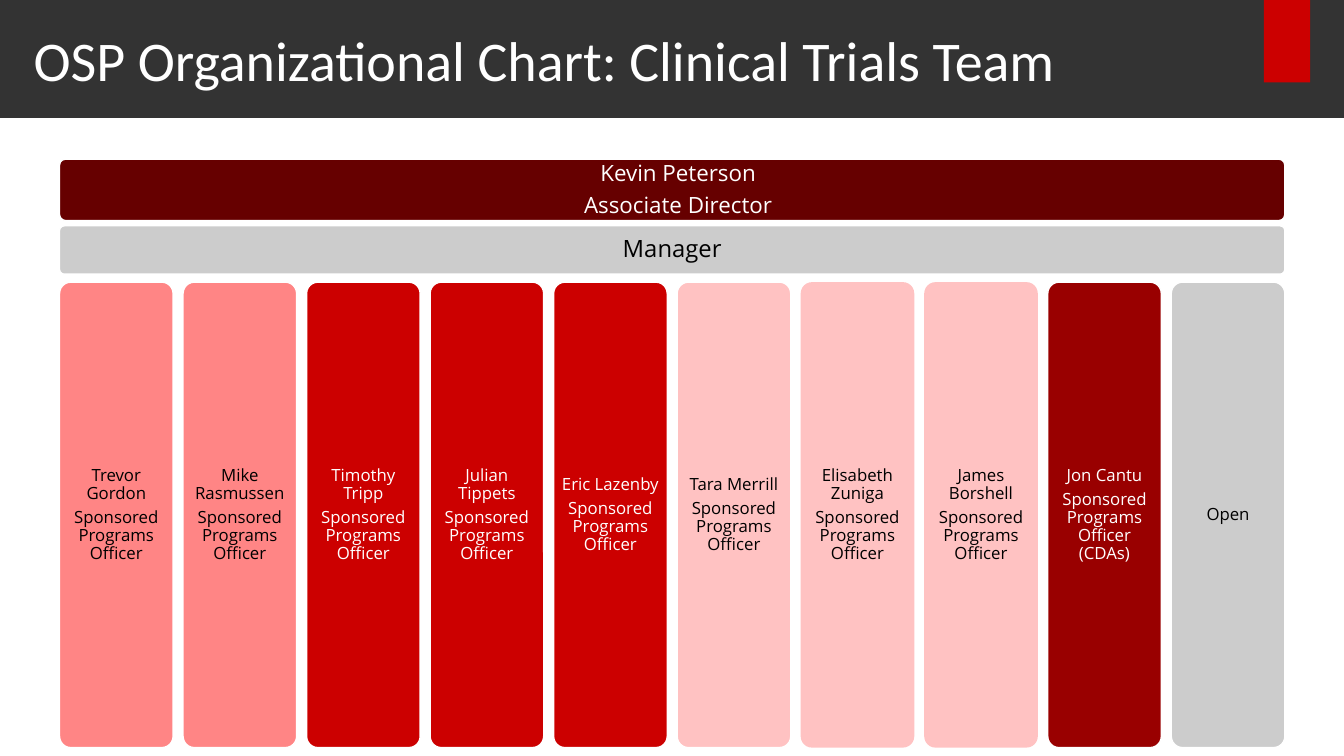
import dataclasses

import pptx
import pptx.dml.color
import pptx.enum.shapes
import pptx.enum.text
import pptx.util

Cm = pptx.util.Cm
Pt = pptx.util.Pt
SHAPE = pptx.enum.shapes.MSO_SHAPE


def rgb(value):
    return pptx.dml.color.RGBColor.from_string(value)


@dataclasses.dataclass(frozen=True)
class Theme:
    white: str = "FFFFFF"
    black: str = "000000"
    charcoal: str = "333333"
    grey: str = "CCCCCC"
    maroon: str = "660000"
    dark_red: str = "990000"
    red: str = "CC0000"
    coral: str = "FF8585"
    pink: str = "FFC2C2"
    title_font: str = "Calibri"
    body_font: str = "Open Sans"
    title_size: float = 40
    manager_size: float = 17
    director_size: float = 16
    officer_size: float = 12


THEME = Theme()
OFFICER = "Sponsored Programs Officer"
TEAM = [
    (["Trevor Gordon", OFFICER], THEME.coral, THEME.black, True),
    (["Mike Rasmussen", OFFICER], THEME.coral, THEME.black, True),
    (["Timothy Tripp", OFFICER], THEME.red, THEME.white, True),
    (["Julian Tippets", OFFICER], THEME.red, THEME.white, True),
    (["Eric Lazenby", OFFICER], THEME.red, THEME.white, True),
    (["Tara Merrill", OFFICER], THEME.pink, THEME.black, True),
    (["Elisabeth Zuniga", OFFICER], THEME.pink, THEME.black, False),
    (["James Borshell", OFFICER], THEME.pink, THEME.black, False),
    (["Jon Cantu", OFFICER + " (CDAs)"], THEME.dark_red, THEME.white, True),
    (["Open"], THEME.grey, THEME.black, True),
]


def add_block(s, kind, box, fill, outlined=False):
    sp = s.shapes.add_shape(kind, *[Cm(v) for v in box])
    sp.shadow.inherit = False
    sp.fill.solid()
    sp.fill.fore_color.rgb = rgb(fill)
    if outlined:
        sp.line.color.rgb = rgb(THEME.white)
        sp.line.width = Pt(1)
    else:
        sp.line.fill.background()
    return sp


def set_margins(tf, left, top, right, bottom):
    tf.margin_left, tf.margin_top = Cm(left), Cm(top)
    tf.margin_right, tf.margin_bottom = Cm(right), Cm(bottom)


def write_lines(tf, lines, font, size, color):
    tf.word_wrap = True
    tf.vertical_anchor = pptx.enum.text.MSO_ANCHOR.MIDDLE
    for i, line in enumerate(lines):
        p = tf.add_paragraph() if i else tf.paragraphs[0]
        p.text = line
        p.font.name = font
        p.font.size = Pt(size)
        p.font.color.rgb = rgb(color)


def add_card(s, box, lines, fill, color, size, inset, outlined=True, shift=0):
    sp = add_block(s, SHAPE.ROUNDED_RECTANGLE, box, fill, outlined)
    sp.adjustments[0] = 0.1
    tf = sp.text_frame
    set_margins(tf, inset + shift, inset, inset, inset)
    write_lines(tf, lines, THEME.body_font, size, color)
    for p in tf.paragraphs:
        p.alignment = pptx.enum.text.PP_ALIGN.CENTER
        p.line_spacing = 0.9
        p.space_after = Pt(size * 0.35)


def add_header(s, left, top, width, height):
    add_block(s, SHAPE.RECTANGLE, (left, top, width, height), THEME.charcoal)
    add_block(s, SHAPE.RECTANGLE, (left + width - 2.02, top, 1.17, 2.08), THEME.red)
    title_box = (left + 0.85, top + 0.51, width - 3.49, height - 1.01)
    tf = s.shapes.add_textbox(*[Cm(v) for v in title_box]).text_frame
    set_margins(tf, 0, 0, 0, 0)
    write_lines(tf, ["OSP Organizational Chart: Clinical Trials Team"],
                THEME.title_font, THEME.title_size, THEME.white)


def add_leaders(s, left, top, width):
    add_card(s, (left, top, width, 1.55), ["Kevin Peterson", "Associate Director"],
             THEME.maroon, THEME.white, THEME.director_size, 0.18, shift=0.3)
    add_card(s, (left, top + 1.68, width, 1.22), ["Manager"],
             THEME.grey, THEME.black, THEME.manager_size, 0.18)


def add_team(s, left, top, width, height):
    gap = 0.25
    card_width = (width - gap * (len(TEAM) - 1)) / len(TEAM)
    for i, (lines, fill, color, outlined) in enumerate(TEAM):
        box = (left + i * (card_width + gap), top, card_width, height)
        add_card(s, box, lines, fill, color, THEME.officer_size, 0.12, outlined)


def main():
    prs = pptx.Presentation()
    prs.slide_width, prs.slide_height = Cm(33.87), Cm(19.05)
    s = prs.slides.add_slide(prs.slide_layouts[6])
    add_header(s, 0, 0, 33.87, 2.97)
    add_leaders(s, 1.5, 4.01, 30.88)
    add_team(s, 1.5, 7.11, 30.88, 11.73)
    prs.save("out.pptx")


if __name__ == "__main__":
    main()
